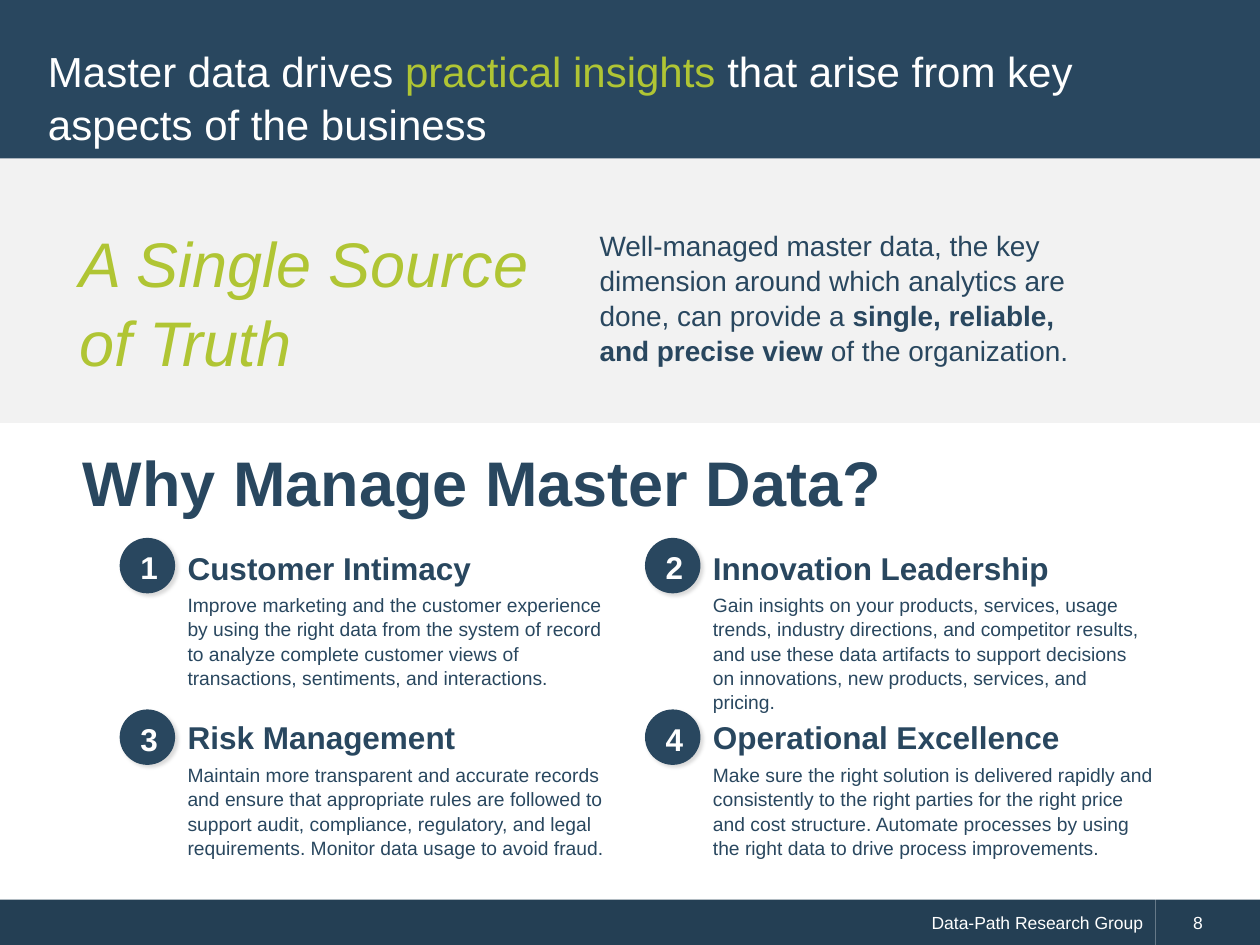
from dataclasses import dataclass
from typing import NamedTuple

import pptx
import pptx.dml.color
import pptx.enum.shapes
import pptx.enum.text
import pptx.oxml
import pptx.util

Pt = pptx.util.Pt
ALIGN = pptx.enum.text.PP_ALIGN
ANCHOR = pptx.enum.text.MSO_ANCHOR
SHAPES = pptx.enum.shapes.MSO_SHAPE


@dataclass(frozen=True)
class Theme:
    font: str = "Arial"
    navy: str = "29475F"
    footer: str = "243F54"
    lime: str = "B0C534"
    pale: str = "F2F2F2"
    white: str = "FFFFFF"
    display_size: float = 36
    title_size: float = 24
    heading_size: float = 18
    lead_size: float = 16
    body_size: float = 11
    footer_size: float = 10
    line_spacing: float = 1.05


class Box(NamedTuple):
    left: float
    top: float
    width: float
    height: float

    def in_points(self):
        return [Pt(length) for length in self]


class Phrase(NamedTuple):
    text: str
    color: str
    bold: bool = False
    italic: bool = False


class Row(NamedTuple):
    badge_top: float
    heading_top: float
    body_top: float


class Reason(NamedTuple):
    heading: str
    body: str
    body_width: float = 259.2


THEME = Theme()
BADGE_SIZE = 31.7
BADGE_LEFT = 68.4
COLUMN_PITCH = 300.2
ROWS = (Row(307.4, 308.9, 334.8), Row(405.4, 405.4, 432))
REASONS = (
    Reason("Customer Intimacy",
           "Improve marketing and the customer experience by using the right data from the "
           "system of record to analyze complete customer views of transactions, sentiments, "
           "and interactions."),
    Reason("Innovation Leadership",
           "Gain insights on your products, services, usage trends, industry directions, and "
           "competitor results, and use these data artifacts to support decisions on "
           "innovations, new products, services, and pricing."),
    Reason("Risk Management",
           "Maintain more transparent and accurate records and ensure that appropriate rules "
           "are followed to support audit, compliance, regulatory, and legal requirements. "
           "Monitor data usage to avoid fraud."),
    Reason("Operational Excellence",
           "Make sure the right solution is delivered rapidly and consistently to the right "
           "parties for the right price and cost structure. Automate processes by using the "
           "right data to drive process improvements.", 267.1),
)
BADGE_SHADOW = (
    '<a:effectLst xmlns:a="http://schemas.openxmlformats.org/drawingml/2006/main">'
    '<a:outerShdw blurRad="25400" dist="25400" dir="2700000" algn="tl" rotWithShape="0">'
    '<a:srgbClr val="000000"><a:alpha val="15000"/></a:srgbClr>'
    '</a:outerShdw></a:effectLst>'
)


def rgb(color: str):
    return pptx.dml.color.RGBColor.from_string(color)


def write(frame, phrases: list[Phrase], size: float, align=ALIGN.LEFT, anchor=ANCHOR.TOP) -> None:
    """Fill the frame with one paragraph made of the given phrases."""
    frame.word_wrap = True
    frame.auto_size = pptx.enum.text.MSO_AUTO_SIZE.NONE
    frame.vertical_anchor = anchor
    paragraph = frame.paragraphs[0]
    paragraph.alignment = align
    paragraph.line_spacing = THEME.line_spacing
    for phrase in phrases:
        run = paragraph.add_run()
        run.text = phrase.text
        run.font.name = THEME.font
        run.font.size = Pt(size)
        run.font.bold = phrase.bold
        run.font.italic = phrase.italic
        run.font.color.rgb = rgb(phrase.color)


def add_text(slide, box: Box, phrases: list[Phrase], size: float) -> None:
    write(slide.shapes.add_textbox(*box.in_points()).text_frame, phrases, size)


def add_filled(slide, preset, box: Box, color: str):
    shape = slide.shapes.add_shape(preset, *box.in_points())
    shape.shadow.inherit = False
    shape.fill.solid()
    shape.fill.fore_color.rgb = rgb(color)
    shape.line.fill.background()
    return shape


def add_badge(slide, number: int, left: float, top: float) -> None:
    badge = add_filled(slide, SHAPES.OVAL, Box(left, top, BADGE_SIZE, BADGE_SIZE), THEME.navy)
    properties = badge.fill._xPr
    properties.remove(properties.find(pptx.oxml.ns.qn("a:effectLst")))
    properties.append(pptx.oxml.parse_xml(BADGE_SHADOW))
    frame = badge.text_frame
    frame.margin_left, frame.margin_top = Pt(2), Pt(1)
    frame.margin_right = frame.margin_bottom = 0
    write(frame, [Phrase(str(number), THEME.white, bold=True)], THEME.heading_size,
          ALIGN.CENTER, ANCHOR.MIDDLE)


def add_reason(slide, index: int, reason: Reason) -> None:
    row = ROWS[index // 2]
    left = BADGE_LEFT + index % 2 * COLUMN_PITCH
    text_left = left + BADGE_SIZE
    add_badge(slide, index + 1, left, row.badge_top)
    add_text(slide, Box(text_left, row.heading_top, 295, 29),
             [Phrase(reason.heading, THEME.navy, bold=True)], THEME.heading_size)
    add_text(slide, Box(text_left, row.body_top, reason.body_width, 74),
             [Phrase(reason.body, THEME.navy)], THEME.body_size)


def add_title(slide) -> None:
    title = slide.shapes.title
    title.left, title.top, title.width, title.height = Box(20.2, 20.2, 679, 69).in_points()
    write(title.text_frame, [
        Phrase("Master data drives ", THEME.white),
        Phrase("practical insights ", THEME.lime),
        Phrase("that arise from key aspects of the business", THEME.white),
    ], THEME.title_size, anchor=ANCHOR.MIDDLE)
    slide.shapes._spTree.append(title._element)  # in front of the title band


def add_footer(slide) -> None:
    publisher = add_filled(slide, SHAPES.RECTANGLE, Box(0, 514, 660.2, 26), THEME.footer)
    write(publisher.text_frame, [Phrase("Data-Path Research Group", THEME.white)],
          THEME.footer_size, ALIGN.RIGHT, ANCHOR.MIDDLE)
    page = add_filled(slide, SHAPES.RECTANGLE, Box(660.2, 514, 59.8, 26), THEME.footer)
    page.text_frame.margin_left = Pt(21.6)
    write(page.text_frame, [Phrase("8", THEME.white)], THEME.footer_size, anchor=ANCHOR.MIDDLE)


def main() -> None:
    deck = pptx.Presentation()
    deck.slide_width, deck.slide_height = Pt(720), Pt(540)
    slide = deck.slides.add_slide(deck.slide_layouts.get_by_name("Title Only"))

    add_footer(slide)
    truth_band = add_filled(slide, SHAPES.RECTANGLE, Box(0, 89.3, 720, 151.2), THEME.pale)
    truth_band.line.color.rgb = rgb(THEME.pale)
    truth_band.line.width = Pt(2)
    add_filled(slide, SHAPES.RECTANGLE, Box(0, 0, 720, 90.6), THEME.navy)
    add_title(slide)

    add_text(slide, Box(38.2, 122.4, 280.8, 94.3),
             [Phrase("A Single Source of Truth", THEME.lime, italic=True)], THEME.display_size)
    add_text(slide, Box(335.5, 126, 293.8, 85), [
        Phrase("Well-managed master data, the key dimension around which analytics are done, "
               "can provide a ", THEME.navy),
        Phrase("single, reliable, and precise view ", THEME.navy, bold=True),
        Phrase("of the organization.", THEME.navy),
    ], THEME.lead_size)
    add_text(slide, Box(40.3, 247.7, 502.6, 51),
             [Phrase("Why Manage Master Data?", THEME.navy, bold=True)], THEME.display_size)
    for index, reason in enumerate(REASONS):
        add_reason(slide, index, reason)

    deck.save("out.pptx")


if __name__ == "__main__":
    main()
